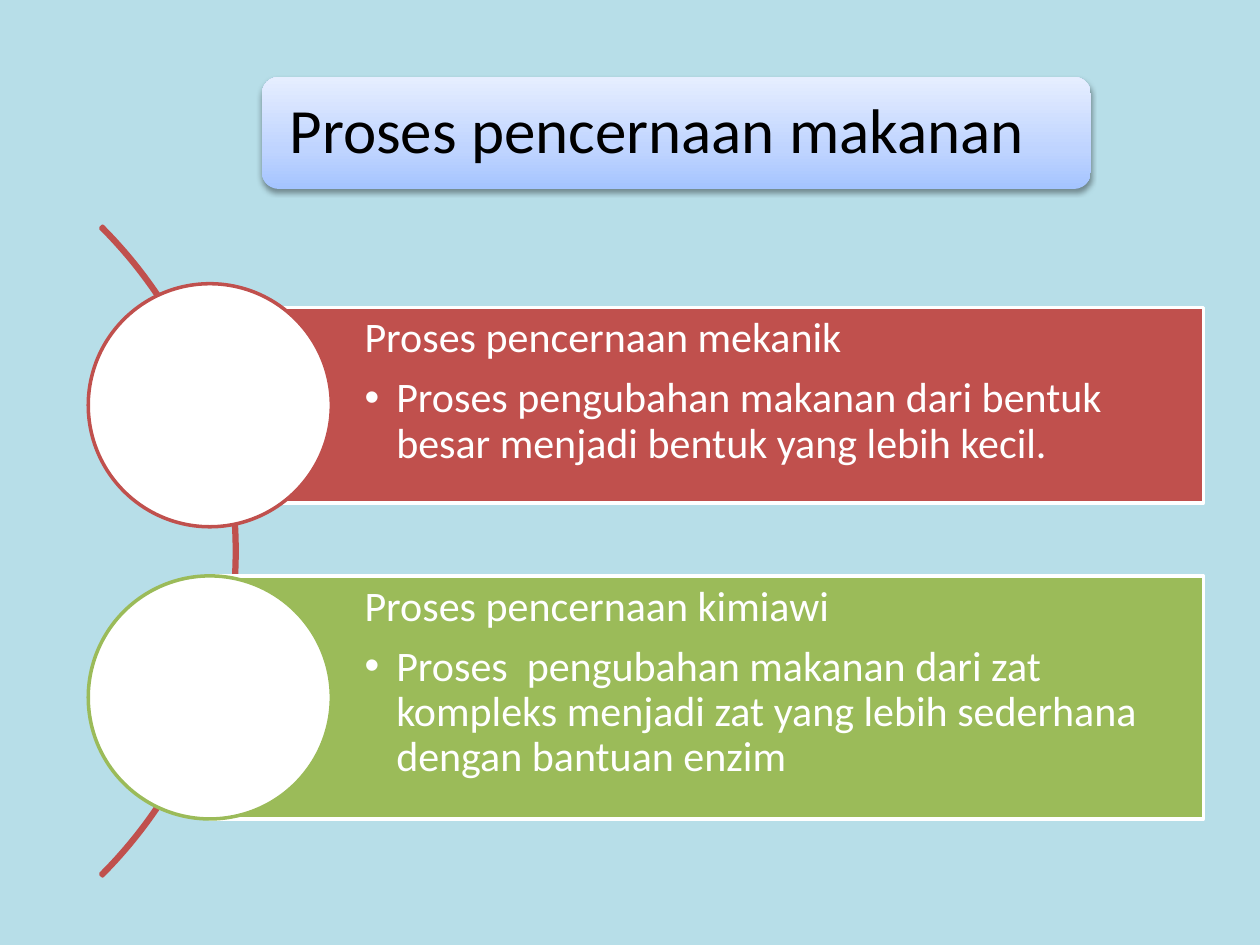
from dataclasses import dataclass

from lxml import etree
from pptx import Presentation
from pptx import util as u
from pptx.dml.color import RGBColor
from pptx.enum import shapes, text
from pptx.oxml import ns


@dataclass(frozen=True)
class Theme:
    font: str = "Calibri"
    background: str = "B7DEE8"
    mechanical: str = "C0504D"
    chemical: str = "9BBB59"
    light: str = "FFFFFF"
    dark: str = "000000"
    gradient: tuple = ((0, "A4C4FF"), (35, "BFD4FF"), (100, "E6EEFF"))
    title_size: int = 36
    body_size: int = 24
    line: int = 2
    spacing: float = 0.9


def sub(parent, tag, **attrs):
    return etree.SubElement(parent, ns.qn(tag), {k: str(v) for k, v in attrs.items()})


def write(p, content, *, font, size, color, spacing, after=0, bullet=False):
    if bullet:
        indent = u.Cm(0.64)
        pPr = p._p.get_or_add_pPr()
        pPr.set("marL", str(indent))
        pPr.set("indent", str(-indent))
        sub(pPr, "a:buFont", typeface="Arial")
        sub(pPr, "a:buChar", char="•")
    p.alignment = text.PP_ALIGN.LEFT
    p.line_spacing = spacing
    p.space_after = u.Pt(after)
    r = p.add_run()
    r.text = content
    r.font.name = font
    r.font.size = u.Pt(size)
    r.font.color.rgb = RGBColor.from_string(color)


class Deck:
    def __init__(self, theme):
        self.theme = theme
        self.prs = Presentation()
        self.prs.slide_width, self.prs.slide_height = u.Cm(25.4), u.Cm(19.05)
        self.s = self.prs.slides.add_slide(self.prs.slide_layouts[6])
        fill = self.s.background.fill
        fill.solid()
        fill.fore_color.rgb = RGBColor.from_string(theme.background)

    def shape(self, kind, box, fill=None, line=None):
        sp = self.s.shapes.add_shape(kind, *map(u.Cm, box))
        sp.shadow.inherit = False
        if fill:
            sp.fill.solid()
            sp.fill.fore_color.rgb = RGBColor.from_string(fill)
        else:
            sp.fill.background()
        if line:
            sp.line.color.rgb = RGBColor.from_string(line)
            sp.line.width = u.Pt(self.theme.line)
        else:
            sp.line.fill.background()
        return sp

    def frame(self, sp, anchor, left, inset):
        tf = sp.text_frame
        tf.word_wrap = True
        tf.vertical_anchor = anchor
        tf.margin_left = u.Cm(left)
        tf.margin_top = tf.margin_right = tf.margin_bottom = u.Cm(inset)
        return tf

    def arc(self, box, color):
        sp = self.shape(shapes.MSO_SHAPE.BLOCK_ARC, box, line=color)
        for i, value in enumerate((189, 27, 0.003)):
            sp.adjustments[i] = value

    def circle(self, left, top, size, color):
        self.shape(shapes.MSO_SHAPE.OVAL, (left, top, size, size), self.theme.light, color)

    def panel(self, box, color, heading, detail):
        t = self.theme
        sp = self.shape(shapes.MSO_SHAPE.RECTANGLE, box, color, t.light)
        tf = self.frame(sp, text.MSO_ANCHOR.TOP, 3.12, 0.18)
        style = dict(font=t.font, size=t.body_size, color=t.light, spacing=t.spacing)
        write(tf.paragraphs[0], heading, after=8.4, **style)
        write(tf.add_paragraph(), detail, after=3.6, bullet=True, **style)

    def title(self, box, content):
        t = self.theme
        sp = self.shape(shapes.MSO_SHAPE.ROUNDED_RECTANGLE, box)
        sp.adjustments[0] = 0.15
        sp.fill.gradient()
        sp.fill.gradient_angle = 90
        spPr = sp._element.spPr
        stops = spPr.find(".//" + ns.qn("a:gsLst"))
        for stop in list(stops):
            stops.remove(stop)
        for pos, color in t.gradient:
            sub(sub(stops, "a:gs", pos=pos * 1000), "a:srgbClr", val=color)
        shadow = sub(spPr.find(ns.qn("a:effectLst")), "a:outerShdw", blurRad=u.Pt(3.1),
                     dist=u.Pt(1.6), dir=5400000, rotWithShape=0)
        sub(sub(shadow, "a:srgbClr", val=t.dark), "a:alpha", val=38000)
        tf = self.frame(sp, text.MSO_ANCHOR.MIDDLE, 0.46, 0.46)
        write(tf.paragraphs[0], content, font=t.font, size=t.title_size,
              color=t.dark, spacing=t.spacing)


def main():
    t = Theme()
    deck = Deck(t)
    deck.arc((-13.74, 1.85, 18.52, 18.52), t.mechanical)

    circle_left, diameter = 1.78, 4.9
    panel_left, panel_width = circle_left + diameter / 2, 20.03
    rows = (
        (5.72, 3.94, t.mechanical, "Proses pencernaan mekanik",
         "Proses pengubahan makanan dari bentuk besar menjadi bentuk yang lebih kecil."),
        (11.61, 4.9, t.chemical, "Proses pencernaan kimiawi",
         "Proses  pengubahan makanan dari zat kompleks menjadi zat yang lebih sederhana "
         "dengan bantuan enzim"),
    )
    for top, height, color, heading, detail in rows:
        panel_top = top + (diameter - height) / 2
        deck.panel((panel_left, panel_top, panel_width, height), color, heading, detail)
        deck.circle(circle_left, top, diameter, color)

    deck.title((5.28, 1.55, 16.71, 2.26), "Proses pencernaan makanan")
    deck.prs.save("out.pptx")


if __name__ == "__main__":
    main()
